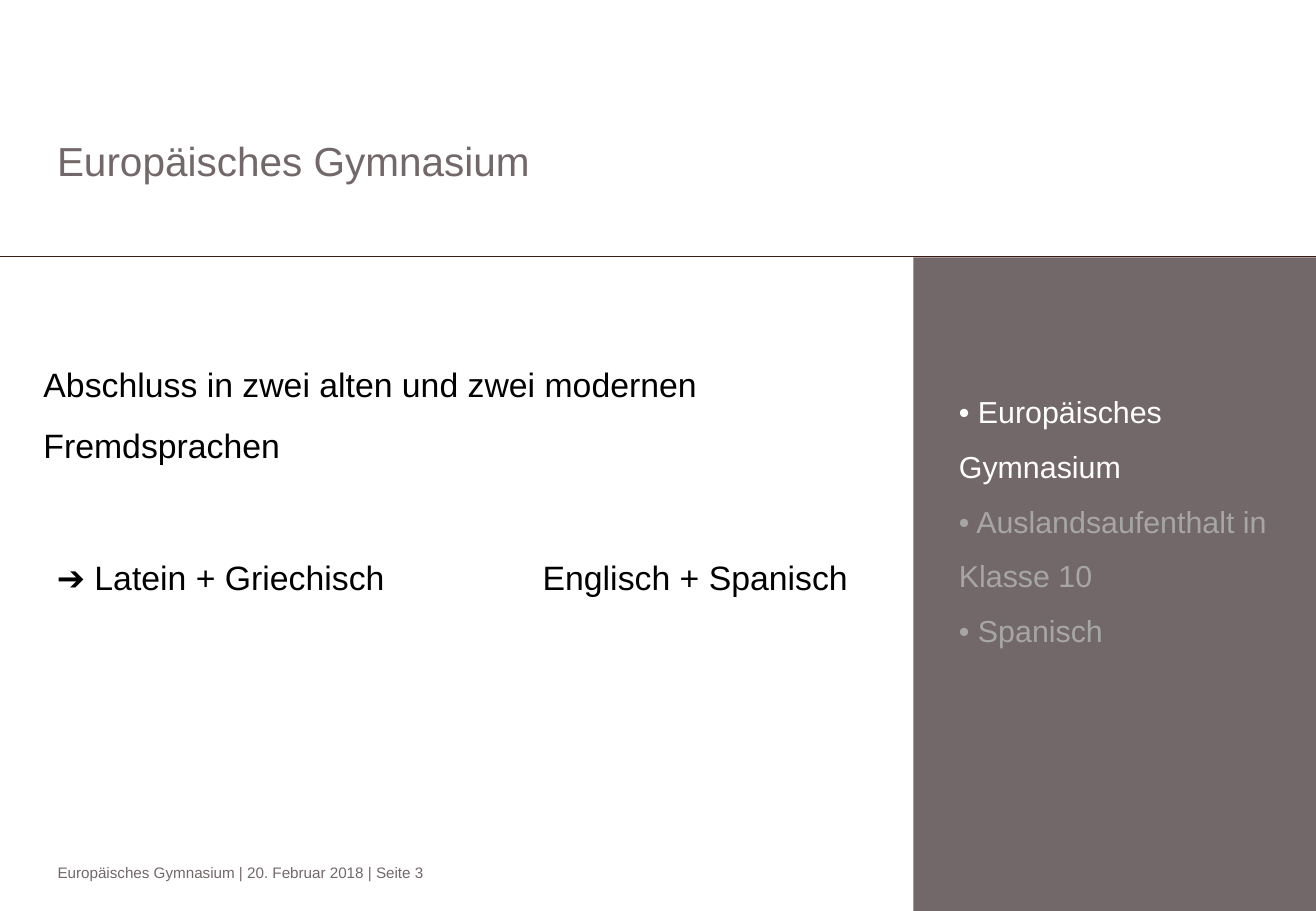
from lxml.etree import SubElement
from pptx import Presentation
from pptx.dml.color import RGBColor
from pptx.enum.shapes import MSO_CONNECTOR, MSO_SHAPE
from pptx.enum.text import MSO_ANCHOR, MSO_AUTO_SIZE, PP_ALIGN
from pptx.oxml.ns import qn
from pptx.util import Pt

WIDTH, HEIGHT = 780, 540
EDGE = 152
HUES = {
    "taupe": "736869",
    "brown": "3C1C12",
    "black": "000000",
    "white": "FFFFFF",
    "grey": "A6A6A6",
}
FRAME = {
    "word_wrap": True,
    "auto_size": MSO_AUTO_SIZE.NONE,
    "vertical_anchor": MSO_ANCHOR.TOP,
}


class Deck:
    def __init__(self, font):
        self.font = font
        self.prs = Presentation()
        self.prs.slide_width, self.prs.slide_height = Pt(WIDTH), Pt(HEIGHT)
        self.slide = self.prs.slides.add_slide(self.prs.slide_layouts[5])

    def hue(self, name):
        return RGBColor.from_string(HUES[name])

    def fill(self, frame, lines, size, space=None, tab=None):
        """Fill a frame with (text, hue) lines; tab is a stop in points."""
        for name, value in FRAME.items():
            setattr(frame, name, value)
        for i, (text, hue) in enumerate(lines):
            para = frame.add_paragraph() if i else frame.paragraphs[0]
            if tab:
                stops = SubElement(para._p.get_or_add_pPr(), qn("a:tabLst"))
                SubElement(stops, qn("a:tab"), pos=str(Pt(tab)), algn="l")
            para.alignment = PP_ALIGN.LEFT
            if space:
                para.line_spacing = space
            run = para.add_run()
            run.text = text
            look = {"name": self.font, "size": Pt(size)}
            for name, value in look.items():
                setattr(run.font, name, value)
            run.font.color.rgb = self.hue(hue)

    def title(self, box, text, size, hue):
        shape = self.slide.shapes.title
        sides = zip(("left", "top", "width", "height"), box)
        for name, value in sides:
            setattr(shape, name, Pt(value))
        self.fill(shape.text_frame, [(text, hue)], size)

    def text(self, box, lines, size, space=None, tab=None):
        shape = self.slide.shapes.add_textbox(*map(Pt, box))
        self.fill(shape.text_frame, lines, size, space, tab)

    def panel(self, box, hue):
        shape = self.slide.shapes.add_shape(MSO_SHAPE.RECTANGLE, *map(Pt, box))
        shape.shadow.inherit = False
        shape.fill.solid()
        shape.fill.fore_color.rgb = self.hue(hue)
        shape.line.fill.background()

    def rule(self, ends, hue, width):
        line = self.slide.shapes.add_connector(
            MSO_CONNECTOR.STRAIGHT, *map(Pt, ends))
        line.line.color.rgb = self.hue(hue)
        line.line.width = Pt(width)
        SubElement(line._element.spPr, qn("a:effectLst"))


def main():
    deck = Deck("Arial")
    deck.panel((541.4, EDGE + 0.6, WIDTH - 541.4, HEIGHT - EDGE - 0.6), "taupe")
    deck.text((561.3, 218.9, 218.7, 170.6), [
        ("• Europäisches Gymnasium", "white"),
        ("• Auslandsaufenthalt in Klasse 10", "grey"),
        ("• Spanisch", "grey"),
    ], 18, space=1.5)
    deck.title((26.6, 77, 544.3, 36.7), "Europäisches Gymnasium", 24, "taupe")
    deck.rule((WIDTH, EDGE, 0, EDGE), "brown", 0.75)
    deck.text((27, 508.3, 289.4, 18), [
        ("Europäisches Gymnasium | 20. Februar 2018 | Seite 3", "taupe"),
    ], 9)
    deck.text((18.7, 200.2, 511.2, 79.9), [
        ("Abschluss in zwei alten und zwei modernen Fremdsprachen", "black"),
    ], 20, space=1.5)
    deck.text((26.6, 314.6, 511.2, 38.9), [
        ("➔ Latein + Griechisch\tEnglisch + Spanisch", "black"),
    ], 20, space=1.5, tab=288)
    deck.prs.save("out.pptx")


if __name__ == "__main__":
    main()
